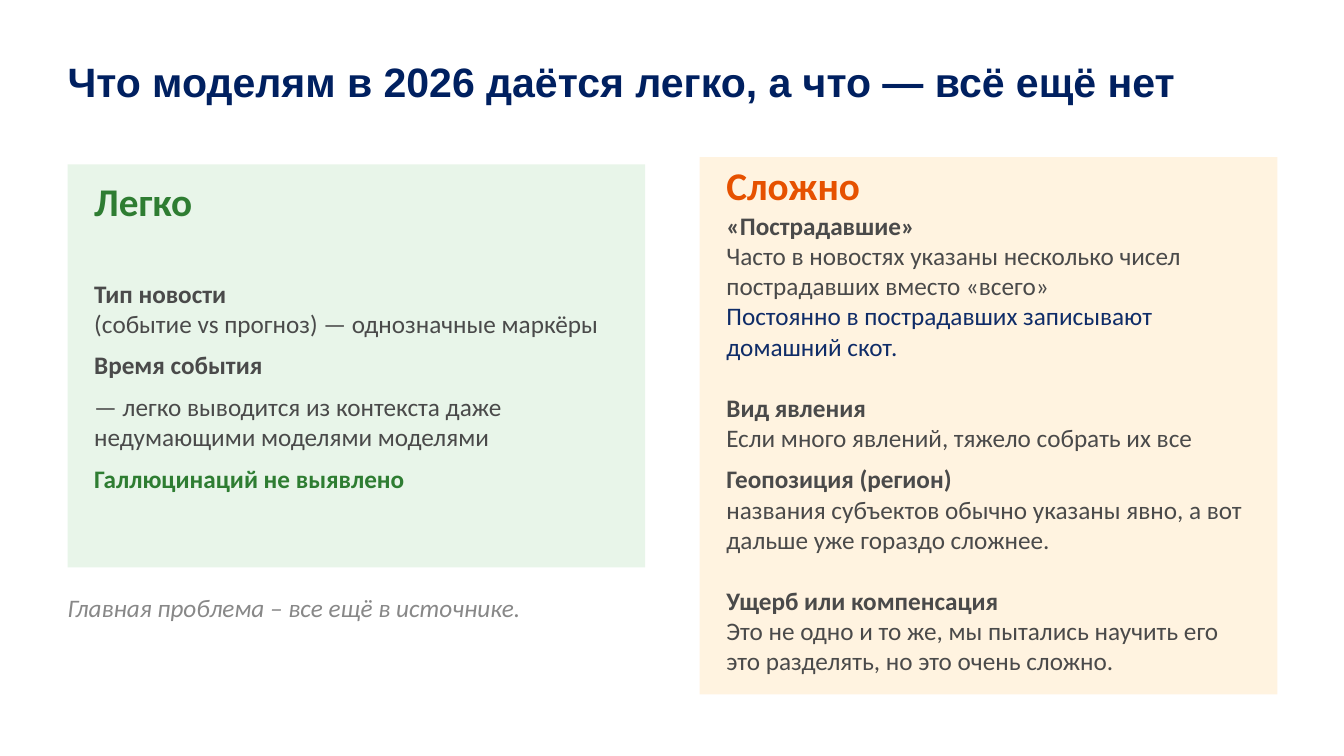
from dataclasses import dataclass

from pptx import Presentation
from pptx.dml.color import RGBColor
from pptx.enum.shapes import MSO_SHAPE
from pptx.enum.text import MSO_ANCHOR
from pptx.util import Inches, Pt


@dataclass(frozen=True)
class Theme:
    heading_font: str = "Arial"
    body_font: str = "Calibri"
    title_size: float = 29.3
    heading_size: float = 28
    body_size: float = 18
    navy: str = "002060"
    ink: str = "4A4A4A"
    accent: str = "0F2C68"
    muted: str = "888888"
    green: str = "2E7D32"
    green_fill: str = "E8F5E9"
    orange: str = "E65100"
    orange_fill: str = "FFF3E0"


THEME = Theme()
MARGIN = 0.67
CONTENT_WIDTH = 12
CARD_WIDTH = 5.73
CARD_TEXT_WIDTH = 5.2
ITEM_GAP = 8
GROUP_GAP = 22  # one body line, in points

# Card content: text and its format
EASY_POINTS = [
    ("Тип новости", dict(bold=True)),
    ("(событие vs прогноз) — однозначные маркёры", dict(after=ITEM_GAP)),
    ("Время события", dict(bold=True, after=ITEM_GAP)),
    ("— легко выводится из контекста даже недумающими моделями моделями",
     dict(after=ITEM_GAP)),
    ("Галлюцинаций не выявлено", dict(bold=True, color=THEME.green)),
]
HARD_POINTS = [
    ("«Пострадавшие»", dict(bold=True)),
    ("Часто в новостях указаны несколько чисел пострадавших вместо «всего»", {}),
    ("Постоянно в пострадавших записывают домашний скот.",
     dict(color=THEME.accent, after=GROUP_GAP)),
    ("Вид явления", dict(bold=True)),
    ("Если много явлений, тяжело собрать их все", dict(after=ITEM_GAP)),
    ("Геопозиция (регион)", dict(bold=True)),
    ("названия субъектов обычно указаны явно, а вот дальше уже гораздо сложнее.",
     dict(after=GROUP_GAP)),
    ("Ущерб или компенсация", dict(bold=True)),
    ("Это не одно и то же, мы пытались научить его это разделять, "
     "но это очень сложно.", {}),
]


def write_text(paragraph, text, *, size=THEME.body_size, font=THEME.body_font,
               color=THEME.ink, bold=False, italic=False, after=0):
    """Write one formatted run into a paragraph."""
    paragraph.space_after = Pt(after)
    run = paragraph.add_run()
    run.text = text
    run.font.size = Pt(size)
    run.font.name = font
    run.font.bold = bold
    run.font.italic = italic
    run.font.color.rgb = RGBColor.from_string(color)


def add_text(slide, left, top, width, height, lines, bottom_inset=0):
    """Add a middle-anchored text box with one paragraph per line."""
    box = slide.shapes.add_textbox(
        Inches(left), Inches(top), Inches(width), Inches(height))
    frame = box.text_frame
    frame.word_wrap = True
    frame.vertical_anchor = MSO_ANCHOR.MIDDLE
    frame.margin_left = frame.margin_right = frame.margin_top = 0
    frame.margin_bottom = Inches(bottom_inset)
    for index, (text, style) in enumerate(lines):
        paragraph = frame.add_paragraph() if index else frame.paragraphs[0]
        write_text(paragraph, text, **style)


def add_panel(slide, left, top, height, fill):
    """Add the plain coloured rectangle behind a card."""
    panel = slide.shapes.add_shape(
        MSO_SHAPE.RECTANGLE, Inches(left), Inches(top),
        Inches(CARD_WIDTH), Inches(height))
    panel.shadow.inherit = False
    panel.fill.solid()
    panel.fill.fore_color.rgb = RGBColor.from_string(fill)
    panel.line.fill.background()


def add_card(slide, left, panel_span, heading_span, points_span, *,
             heading, points, color, fill, bottom_inset=0):
    """Add a card; each span is a (top, height) pair."""
    text_left = left + (CARD_WIDTH - CARD_TEXT_WIDTH) / 2
    heading_style = dict(size=THEME.heading_size, color=color, bold=True)
    add_panel(slide, left, *panel_span, fill)
    add_text(slide, text_left, heading_span[0], CARD_TEXT_WIDTH,
             heading_span[1], [(heading, heading_style)])
    add_text(slide, text_left, points_span[0], CARD_TEXT_WIDTH,
             points_span[1], points, bottom_inset)


def main():
    deck = Presentation()
    deck.slide_width = Inches(13.33)
    deck.slide_height = Inches(7.5)
    slide = deck.slides.add_slide(deck.slide_layouts[6])

    # Title
    title_style = dict(size=THEME.title_size, font=THEME.heading_font,
                       color=THEME.navy, bold=True)
    add_text(slide, MARGIN, 0.47, CONTENT_WIDTH, 0.67,
             [("Что моделям в 2026 даётся легко, а что — всё ещё нет",
               title_style)])

    # Easy and hard cards
    add_card(slide, MARGIN, (1.63, 4), (1.76, 0.47), (2.29, 3.07),
             heading="Легко", points=EASY_POINTS,
             color=THEME.green, fill=THEME.green_fill)
    add_card(slide, MARGIN + CONTENT_WIDTH - CARD_WIDTH,
             (1.56, 5.33), (1.63, 0.4), (2.36, 4.37),
             heading="Сложно", points=HARD_POINTS,
             color=THEME.orange, fill=THEME.orange_fill, bottom_inset=0.3)

    # Closing remark
    add_text(slide, MARGIN, 5.83, CONTENT_WIDTH, 0.4,
             [("Главная проблема – все ещё в источнике.",
               dict(color=THEME.muted, italic=True))])

    deck.save("out.pptx")


if __name__ == "__main__":
    main()
